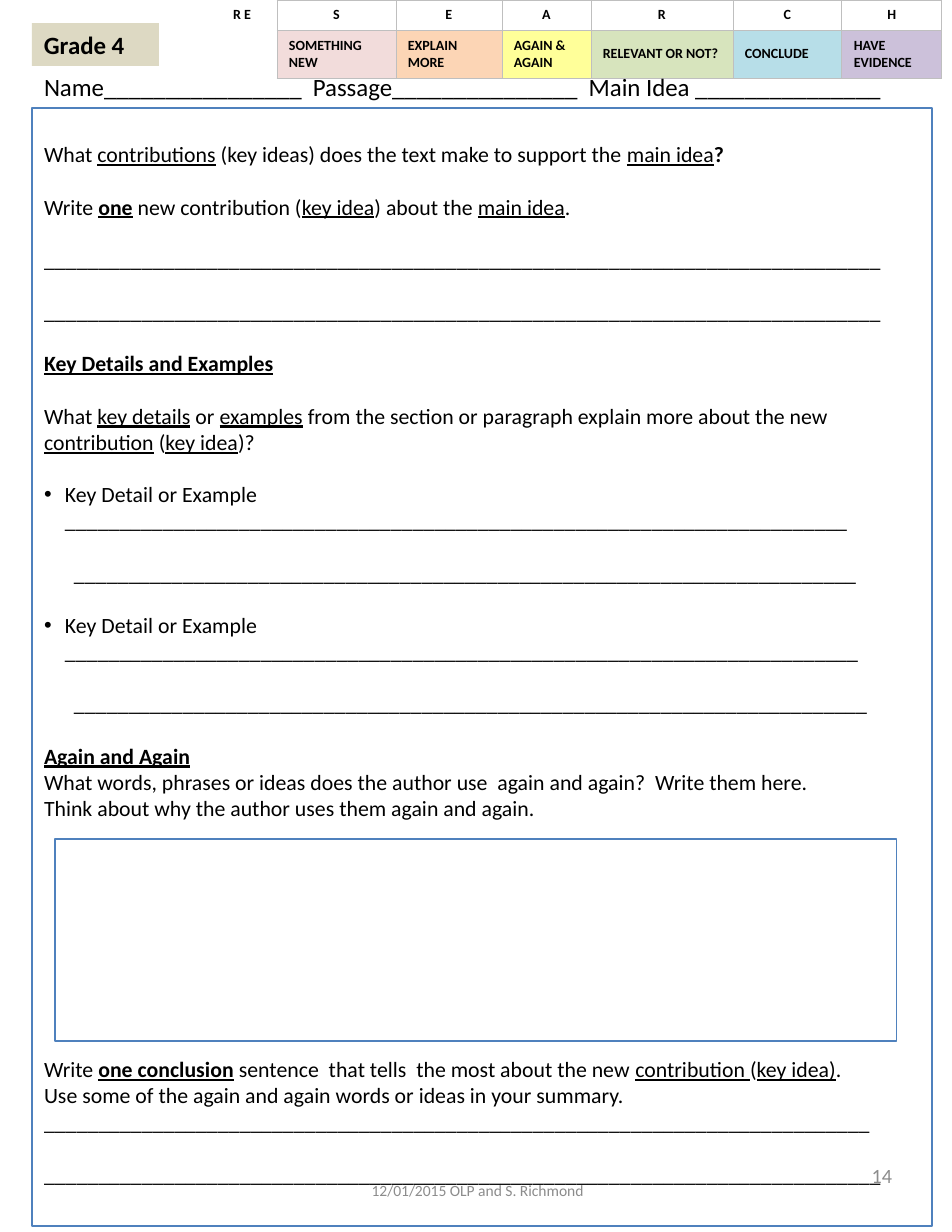
from pptx import Presentation
from pptx.dml.color import RGBColor
from pptx.enum.shapes import MSO_SHAPE
from pptx.enum.text import MSO_ANCHOR, PP_ALIGN
from pptx.oxml.ns import qn
from pptx.util import Emu, Pt
from lxml.etree import SubElement

SCALE = 914400 / 112
LINE = 16.8
COLOR = {
    "ink": "000000", "paper": "FFFFFF", "blue": "4F81BD", "tan": "DDD9C3",
    "gray": "8C8C8C", "rule": "BFBFBF", "pink": "F2DCDB", "peach": "FCD5B5",
    "yellow": "FFFF99", "green": "D7E4BD", "aqua": "B7DEE8", "violet": "CCC1DA",
}
STEPS = [
    ("S", "SOMETHING NEW", "pink", 119),
    ("E", "EXPLAIN MORE", "peach", 106),
    ("A", "AGAIN & AGAIN", "yellow", 89),
    ("R", "RELEVANT OR NOT?", "green", 142),
    ("C", "CONCLUDE", "aqua", 109),
    ("H", "HAVE EVIDENCE", "violet", 100),
]
# (blank lines above, kind, runs)
TASKS = [
    (0, "", [("What ", ""), ("contributions", "u"),
             (" (key ideas) does the text make to support the ", ""),
             ("main idea", "u"), ("?", "b")]),
    (1, "", [("Write ", ""), ("one", "bu"), (" new contribution (", ""),
             ("key idea", "u"), (") about the ", ""), ("main idea", "u"), (".", "")]),
    (1, "", [("_" * 77, "")]),
    (1, "", [("_" * 77, "")]),
    (1, "", [("Key Details and Examples", "bu")]),
    (1, "", [("What ", ""), ("key details", "u"), (" or ", ""), ("examples", "u"),
             (" from the section or paragraph explain more about the new ", ""),
             ("contribution", "u"), (" (", ""), ("key idea", "u"), (")?", "")]),
    (1, "bullet", [("Key Detail or Example " + "_" * 72, "")]),
    (1, "inset", [("_" * 72, "")]),
    (1, "bullet", [("Key Detail or Example " + "_" * 73, "")]),
    (1, "inset", [("_" * 73, "")]),
    (1, "", [("Again and Again", "bu")]),
    (0, "", [("What words, phrases or ideas does the author use  again and again?"
              "  Write them here.", "")]),
    (0, "", [("Think about why the author uses them again and again.", "")]),
    (9, "", [("Write ", ""), ("one conclusion", "bu"),
             (" sentence  that tells  the most about the new ", ""),
             ("contribution ", "u"), ("(", ""), ("key idea)", "u"), (".", "")]),
    (0, "", [("Use some of the again and again words or ideas in your summary.", "")]),
    (0, "", [("_" * 76, "")]),
    (1, "", [("_" * 77, "")]),
]


def px(n):
    return Emu(round(n * SCALE))


def rgb(name):
    return RGBColor.from_string(COLOR[name])


def add_run(para, text, size, style="", color="ink"):
    run = para.add_run()
    run.text = text
    font = run.font
    font.name, font.size = "Calibri", Pt(size)
    font.bold, font.underline = "b" in style, "u" in style
    font.color.rgb = rgb(color)


def set_frame(frame, top=7, anchor=MSO_ANCHOR.TOP):
    frame.word_wrap = True
    frame.vertical_anchor = anchor
    frame.margin_left = frame.margin_right = px(12)
    frame.margin_top, frame.margin_bottom = px(top), px(7)


def add_box(slide, area, fill=None, line=None):
    box = slide.shapes.add_shape(MSO_SHAPE.RECTANGLE, *map(px, area))
    box.shadow.inherit = False
    if fill:
        box.fill.solid()
        box.fill.fore_color.rgb = rgb(fill)
    else:
        box.fill.background()
    if line:
        box.line.color.rgb = rgb(line)
        box.line.width = Pt(0.75)
    else:
        box.line.fill.background()
    return box


def add_label(slide, area, text, size, color="ink", align=PP_ALIGN.LEFT,
              anchor=MSO_ANCHOR.TOP):
    frame = slide.shapes.add_textbox(*map(px, area)).text_frame
    set_frame(frame, anchor=anchor)
    para = frame.paragraphs[0]
    para.alignment = align
    add_run(para, text, size, color=color)


def set_indent(para, kind):
    props = para._p.get_or_add_pPr()
    if kind == "bullet":
        props.set("marL", str(px(21)))
        props.set("indent", str(-px(21)))
        SubElement(props, qn("a:buFont"), typeface="Arial")
        SubElement(props, qn("a:buChar"), char="•")
    elif kind == "inset":
        props.set("marL", str(px(30)))
        props.set("indent", "0")


def add_tasks(slide):
    frame = add_box(slide, (32, 108, 900, 1118), "paper", "blue").text_frame
    set_frame(frame, top=33)
    for i, (gap, kind, runs) in enumerate(TASKS):
        para = frame.add_paragraph() if i else frame.paragraphs[0]
        para.alignment = PP_ALIGN.LEFT
        para.space_before = Pt(gap * LINE)
        set_indent(para, kind)
        for text, style in runs:
            add_run(para, text, 14, style)


def set_edges(cell, sides):
    props = cell._tc.get_or_add_tcPr()
    for i, side in enumerate("LRTB"):
        edge = SubElement(props, qn("a:ln" + side), w=str(Pt(0.5)))
        props.insert(i, edge)
        if side in sides:
            fill = SubElement(edge, qn("a:solidFill"))
            SubElement(fill, qn("a:srgbClr"), val=COLOR["rule"])
        else:
            SubElement(edge, qn("a:noFill"))


def fill_cell(cell, text, fill, align, sides="LRTB", anchor=MSO_ANCHOR.MIDDLE):
    cell.fill.solid()
    cell.fill.fore_color.rgb = rgb(fill)
    cell.vertical_anchor = anchor
    cell.margin_left = cell.margin_right = px(12)
    cell.margin_top = cell.margin_bottom = px(6)
    set_edges(cell, sides)
    para = cell.text_frame.paragraphs[0]
    para.alignment = align
    if text:
        add_run(para, text, 9, "b")


def add_steps(slide):
    widths = [70] + [step[3] for step in STEPS]
    area = (207, 0, sum(widths), 78)
    table = slide.shapes.add_table(2, len(widths), *map(px, area)).table
    table.first_row = table.horz_banding = False
    for col, width in zip(table.columns, widths):
        col.width = px(width)
    for row, height in zip(table.rows, (30, 48)):
        row.height = px(height)
    for i, text in enumerate(("R E", "")):
        fill_cell(table.cell(i, 0), text, "paper", PP_ALIGN.CENTER, "R", MSO_ANCHOR.TOP)
    table.cell(0, 0).merge(table.cell(1, 0))
    for i, (key, text, fill, _) in enumerate(STEPS, 1):
        fill_cell(table.cell(0, i), key, "paper", PP_ALIGN.CENTER)
        fill_cell(table.cell(1, i), text, fill, PP_ALIGN.LEFT)


def add_grade(slide):
    frame = add_box(slide, (32, 23, 127, 43), "tan").text_frame
    set_frame(frame)
    para = frame.paragraphs[0]
    para.alignment = PP_ALIGN.LEFT
    add_run(para, "Grade 4", 16, "b")


def main():
    deck = Presentation()
    deck.slide_width, deck.slide_height = px(952), px(1232)
    slide = deck.slides.add_slide(deck.slide_layouts[6])
    add_tasks(slide)
    add_box(slide, (55, 839, 842, 202), line="blue")
    add_steps(slide)
    names = "  ".join(["Name" + "_" * 16, "Passage" + "_" * 15, "Main Idea " + "_" * 15])
    add_label(slide, (32, 65, 900, 43), names, 16)
    add_grade(slide)
    add_label(slide, (682, 1142, 222, 66), "14", 13, "gray",
              PP_ALIGN.RIGHT, MSO_ANCHOR.MIDDLE)
    add_label(slide, (327, 1157, 301, 66), "12/01/2015 OLP and S. Richmond", 10, "gray",
              PP_ALIGN.CENTER, MSO_ANCHOR.MIDDLE)
    deck.save("out.pptx")


if __name__ == "__main__":
    main()
